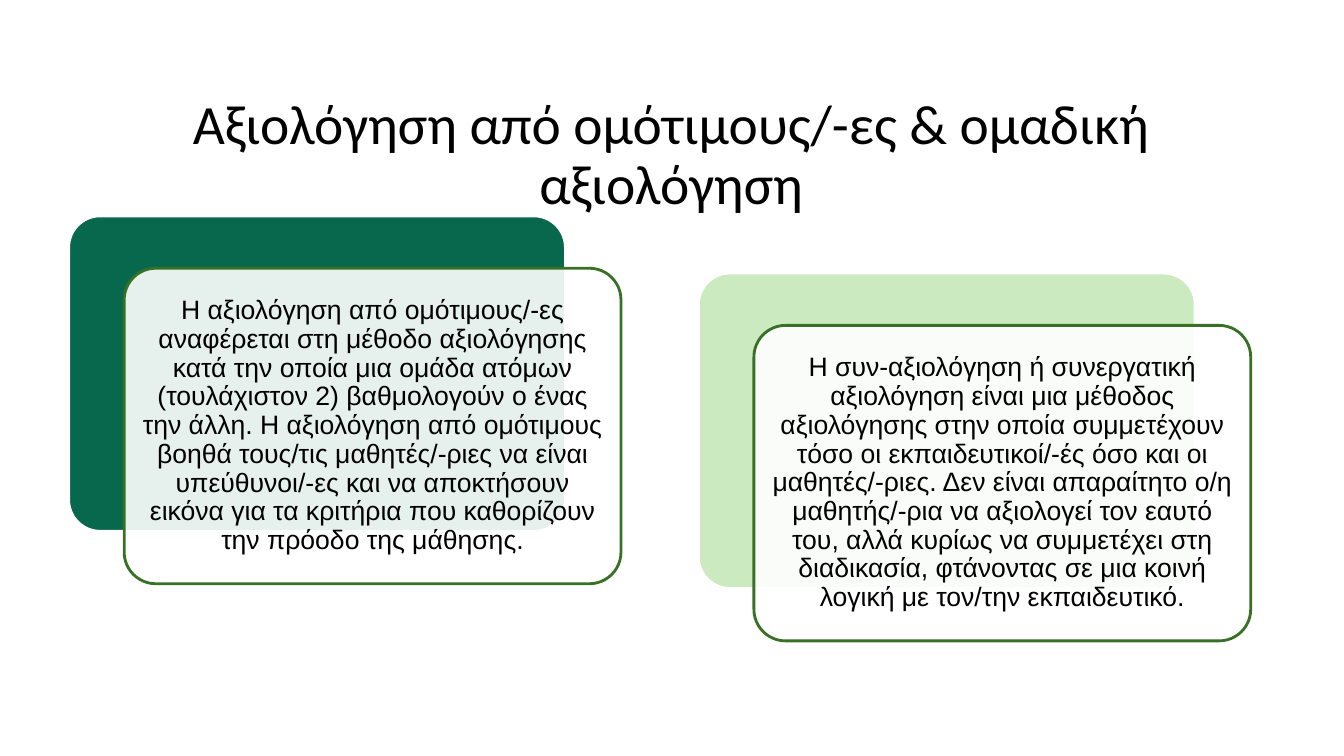
from dataclasses import dataclass

from lxml import etree
from pptx import Presentation
from pptx import util as u
from pptx.dml.color import RGBColor
from pptx.enum import shapes, text
from pptx.oxml import ns

WHITE = RGBColor(0xFF, 0xFF, 0xFF)
BLACK = RGBColor(0, 0, 0)
GREEN = RGBColor(0x08, 0x68, 0x4E)
PALE = RGBColor(0xCB, 0xEA, 0xC0)
EDGE = RGBColor(0x38, 0x70, 0x26)

# Card size and the shift of the front card from the back one, in cm
WIDE, HIGH = 12.52, 7.95
SHIFT_X, SHIFT_Y = 1.4, 1.32

TITLE = "Αξιολόγηση από ομότιμους/-ες & ομαδική αξιολόγηση"


@dataclass
class Pair:
    left: float
    top: float
    fill: RGBColor
    words: str


PAIRS = [
    Pair(1.73, 5.44, GREEN,
         "Η αξιολόγηση από ομότιμους/-ες αναφέρεται στη μέθοδο αξιολόγησης "
         "κατά την οποία μια ομάδα ατόμων (τουλάχιστον 2) βαθμολογούν ο ένας "
         "την άλλη. Η αξιολόγηση από ομότιμους βοηθά τους/τις μαθητές/-ριες "
         "να είναι υπεύθυνοι/-ες και να αποκτήσουν εικόνα για τα κριτήρια "
         "που καθορίζουν την πρόοδο της μάθησης."),
    Pair(17.6, 6.88, PALE,
         "Η συν-αξιολόγηση ή συνεργατική αξιολόγηση είναι μια μέθοδος "
         "αξιολόγησης στην οποία συμμετέχουν τόσο οι εκπαιδευτικοί/-ές όσο "
         "και οι μαθητές/-ριες. Δεν είναι απαραίτητο ο/η μαθητής/-ρια να "
         "αξιολογεί τον εαυτό του, αλλά κυρίως να συμμετέχει στη διαδικασία, "
         "φτάνοντας σε μια κοινή λογική με τον/την εκπαιδευτικό."),
]


def apply(item: object, form: dict) -> None:
    for key, value in form.items():
        setattr(item, key, value)


def write(shape, words: str, face: str, size: float,
          side: float, end: float) -> None:
    """Set centred text with the given side and end margins in cm."""
    frame = shape.text_frame
    apply(frame, {
        "word_wrap": True,
        "vertical_anchor": text.MSO_ANCHOR.MIDDLE,
        "margin_left": u.Cm(side), "margin_right": u.Cm(side),
        "margin_top": u.Cm(end), "margin_bottom": u.Cm(end),
    })
    para = frame.paragraphs[0]
    apply(para, {"alignment": text.PP_ALIGN.CENTER, "line_spacing": 0.9})
    run = para.add_run()
    run.text = words
    apply(run.font, {"name": face, "size": u.Pt(size)})
    run.font.color.rgb = BLACK


def card(slide, left: float, top: float, fill: RGBColor, edge: RGBColor):
    """Draw a rounded card."""
    shape = slide.shapes.add_shape(
        shapes.MSO_SHAPE.ROUNDED_RECTANGLE,
        u.Cm(left), u.Cm(top), u.Cm(WIDE), u.Cm(HIGH))
    shape.adjustments[0] = 0.1
    shape.shadow.inherit = False
    shape.fill.solid()
    shape.fill.fore_color.rgb = fill
    shape.line.color.rgb = edge
    shape.line.width = u.Pt(2)
    return shape


def fade(shape, part: int) -> None:
    """Make the fill opaque to the given percentage."""
    tint = shape.element.spPr.find(ns.qn("a:solidFill"))[0]
    etree.SubElement(tint, ns.qn("a:alpha"), val=str(part * 1000))


def draw(slide, pair: Pair) -> None:
    """Draw a coloured back card and the text card before it."""
    card(slide, pair.left, pair.top, pair.fill, WHITE)
    front = card(slide, pair.left + SHIFT_X, pair.top + SHIFT_Y, WHITE, EDGE)
    fade(front, 90)
    write(front, pair.words, "Arial", 19, 0.2, 0.2)


def main() -> None:
    deck = Presentation()
    apply(deck, {"slide_width": u.Cm(33.87), "slide_height": u.Cm(19.05)})
    slide = deck.slides.add_slide(deck.slide_layouts[6])

    # Title
    title = slide.shapes.add_textbox(
        u.Cm(2.31), u.Cm(2.31), u.Cm(29.21), u.Cm(3.28))
    write(title, TITLE, "Calibri", 39.6, 0.25, 0.13)

    # Card pairs
    for pair in PAIRS:
        draw(slide, pair)

    deck.save("out.pptx")


if __name__ == "__main__":
    main()
